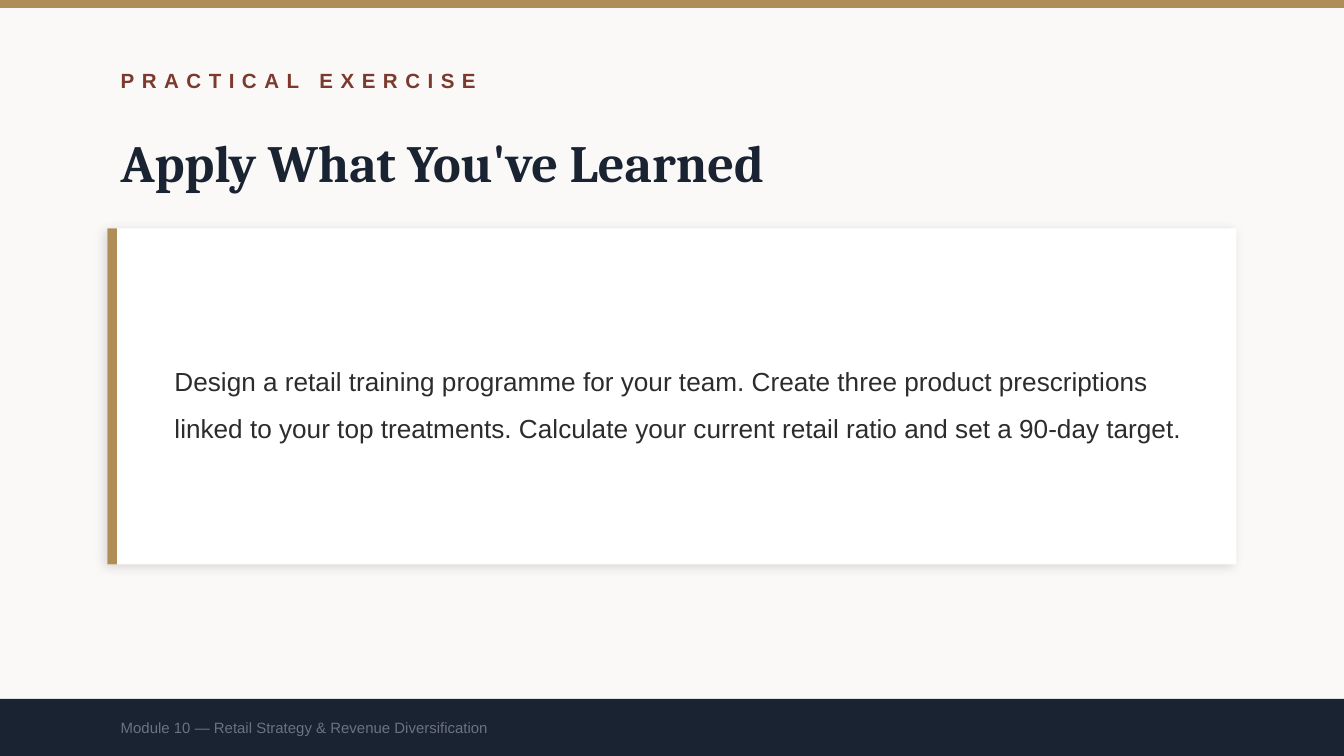
from lxml import etree
from pptx import Presentation
from pptx.dml.color import RGBColor
from pptx.enum import shapes, text
from pptx.oxml import ns
from pptx.util import Inches, Pt

GOLD, NAVY, WHITE = "B08D57", "1A2332", "FFFFFF"
LEFT = 0.8
WIDTH = 10
HEIGHT = WIDTH * 9 / 16


def rgb(color):
    return RGBColor.from_string(color)


def add_panel(slide, left, top, width, height, color):
    panel = slide.shapes.add_shape(
        shapes.MSO_SHAPE.RECTANGLE,
        Inches(left), Inches(top), Inches(width), Inches(height))
    panel.shadow.inherit = False
    panel.fill.solid()
    panel.fill.fore_color.rgb = rgb(color)
    panel.line.fill.background()
    return panel


def add_soft_shadow(panel, blur, distance, angle, opacity):
    effects = panel._element.spPr.find(ns.qn("a:effectLst"))
    shadow = etree.SubElement(
        effects, ns.qn("a:outerShdw"), blurRad=str(Pt(blur)),
        dist=str(Pt(distance)), dir=str(angle * 60000),
        algn="bl", rotWithShape="0")
    tint = etree.SubElement(shadow, ns.qn("a:srgbClr"), val="000000")
    etree.SubElement(tint, ns.qn("a:alpha"), val=str(opacity * 1000))


def add_text(slide, words, left, top, width, height, size, color,
             font="Arial", bold=False, tracking=None, line_spacing=None):
    box = slide.shapes.add_textbox(
        Inches(left), Inches(top), Inches(width), Inches(height))
    frame = box.text_frame
    frame.word_wrap = True
    frame.vertical_anchor = text.MSO_ANCHOR.MIDDLE
    frame.text = words
    paragraph = frame.paragraphs[0]
    if line_spacing:
        paragraph.line_spacing = line_spacing
    run = paragraph.runs[0]
    run.font.name = font
    run.font.size = Pt(size)
    run.font.bold = bold
    run.font.color.rgb = rgb(color)
    if tracking:
        run.font._element.set("spc", str(tracking * 100))


def main():
    deck = Presentation()
    deck.slide_width, deck.slide_height = Inches(WIDTH), Inches(HEIGHT)
    slide = deck.slides.add_slide(deck.slide_layouts[6])
    slide.background.fill.solid()
    slide.background.fill.fore_color.rgb = rgb("FAF9F7")

    # Top band and headings
    add_panel(slide, 0, 0, WIDTH, 0.06, GOLD)
    add_text(slide, "PRACTICAL EXERCISE", LEFT, 0.4, 8, 0.4, 11, "7C3A2E",
             bold=True, tracking=4)
    add_text(slide, "Apply What You've Learned", LEFT, 0.9, 8, 0.6, 28, NAVY,
             font="Cambria", bold=True)

    # Exercise card with accent edge
    card_top, card_height = 1.7, 2.5
    card = add_panel(slide, LEFT, card_top, WIDTH - 2 * LEFT, card_height, WHITE)
    add_soft_shadow(card, blur=6, distance=2, angle=135, opacity=12)
    add_panel(slide, LEFT, card_top, 0.07, card_height, GOLD)
    add_text(slide,
             "Design a retail training programme for your team. "
             "Create three product prescriptions linked to your top treatments. "
             "Calculate your current retail ratio and set a 90-day target.",
             1.2, card_top + 0.2, 7.7, card_height - 0.4, 14, "2C2C2C",
             line_spacing=1.5)

    # Footer
    footer_top = 5.2
    footer_height = HEIGHT - footer_top
    add_panel(slide, 0, footer_top, WIDTH, footer_height, NAVY)
    add_text(slide, "Module 10 — Retail Strategy & Revenue Diversification",
             LEFT, footer_top, 8, footer_height, 8, "6B7280")

    deck.save("out.pptx")


if __name__ == "__main__":
    main()
